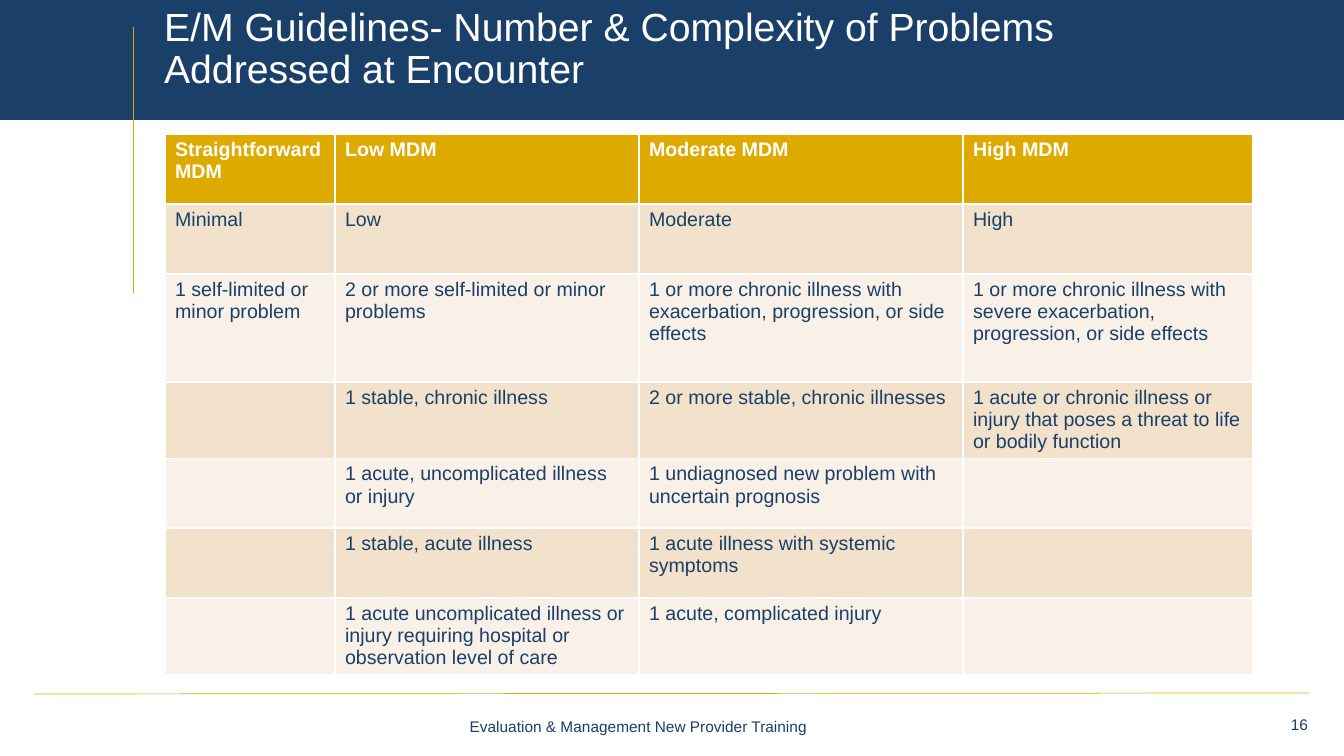
import pptx
import pptx.dml.color
import pptx.enum.shapes
import pptx.enum.text
import pptx.oxml.ns
import pptx.util
from lxml import etree

TITLE = "E/M Guidelines- Number & Complexity of Problems Addressed at Encounter"
FOOTER = "Evaluation & Management New Provider Training"
PAGE_NUMBER = "16"
ROWS = [
    ["Straightforward MDM", "Low MDM", "Moderate MDM", "High MDM"],
    ["Minimal", "Low", "Moderate", "High"],
    ["1 self-limited or minor problem",
     "2 or more self-limited or minor problems",
     "1 or more chronic illness with exacerbation, progression, or side effects",
     "1 or more chronic illness with severe exacerbation, progression, or side effects"],
    ["", "1 stable, chronic illness", "2 or more stable, chronic illnesses",
     "1 acute or chronic illness or injury that poses a threat to life or bodily function"],
    ["", "1 acute, uncomplicated illness or injury",
     "1 undiagnosed new problem with uncertain prognosis", ""],
    ["", "1 stable, acute illness", "1 acute illness with systemic symptoms", ""],
    ["", "1 acute uncomplicated illness or injury requiring hospital or observation level of care",
     "1 acute, complicated injury", ""],
]
COLUMN_WIDTHS = [170, 304, 324, 290]
ROW_HEIGHTS = [70, 70, 108, 76, 70, 70, 76]
COLORS = {"navy": "1A3F68", "gold": "DEAA00", "white": "FFFFFF",
          "sand": "F2E2CC", "cream": "F9F1E7"}
FONT = "Arial"
SLIDE_WIDTH, SLIDE_HEIGHT = 1344, 756
EMU_PER_PX = 914400 / 100.8
ALIGN = pptx.enum.text.PP_ALIGN
BOTTOM = pptx.enum.text.MSO_ANCHOR.BOTTOM


def px(length):
    return pptx.util.Emu(round(length * EMU_PER_PX))


def color(name):
    return pptx.dml.color.RGBColor.from_string(COLORS[name])


def style_font(para, size, color_name, bold=False):
    para.font.name = FONT
    para.font.size = pptx.util.Pt(size)
    para.font.bold = bold
    para.font.color.rgb = color(color_name)


def fill_bottom_text(box, text, size, color_name, align):
    """Set one tightly spaced paragraph that sits at the bottom of the box."""
    frame = box.text_frame
    frame.text = text
    frame.word_wrap = True
    frame.auto_size = pptx.enum.text.MSO_AUTO_SIZE.NONE
    frame.vertical_anchor = BOTTOM
    para = frame.paragraphs[0]
    para.alignment = align
    para.line_spacing = 0.9
    style_font(para, size, color_name)


def add_rule(page, start, end):
    rule = page.shapes.add_connector(
        pptx.enum.shapes.MSO_CONNECTOR.STRAIGHT, *map(px, start + end))
    rule.line.color.rgb = color("gold")
    rule.line.width = pptx.util.Pt(0.5)
    etree.SubElement(rule._element.spPr, pptx.oxml.ns.qn("a:effectLst"))


def add_footer(page):
    number = page.shapes.add_textbox(*map(px, (966, 704, 352, 35)))
    fill_bottom_text(number, PAGE_NUMBER, 11, "navy", ALIGN.RIGHT)
    footer = page.shapes.add_textbox(*map(px, (371, 708, 601, 33)))
    fill_bottom_text(footer, FOOTER, 11, "navy", ALIGN.CENTER)
    footer.text_frame.margin_right = px(76)
    add_rule(page, (1309, 693), (34, 694))


def add_header(page):
    band = page.shapes.add_shape(
        pptx.enum.shapes.MSO_SHAPE.RECTANGLE, 0, 0, px(SLIDE_WIDTH), px(120))
    band.shadow.inherit = False
    band.fill.solid()
    band.fill.fore_color.rgb = color("navy")
    band.line.fill.background()
    add_rule(page, (133, 293), (133, 27))

    title = page.shapes.title
    title.left, title.top, title.width, title.height = map(px, (154, 47, 1008, 50))
    fill_bottom_text(title, TITLE, 28, "white", ALIGN.LEFT)
    page.shapes._spTree.append(title._element)  # in front of the band


def add_problem_table(page):
    table = page.shapes.add_table(
        len(ROWS), len(COLUMN_WIDTHS), px(165), px(134),
        px(sum(COLUMN_WIDTHS)), px(sum(ROW_HEIGHTS))).table
    for column, width in zip(table.columns, COLUMN_WIDTHS):
        column.width = px(width)
    for row_index, (row, height) in enumerate(zip(table.rows, ROW_HEIGHTS)):
        row.height = px(height)
        is_header = row_index == 0
        fill = "gold" if is_header else ("cream", "sand")[row_index % 2]
        for cell, text in zip(row.cells, ROWS[row_index]):
            cell.text = text
            cell.fill.solid()
            cell.fill.fore_color.rgb = color(fill)
            style_font(cell.text_frame.paragraphs[0], 14,
                       "white" if is_header else "navy", is_header)


def main():
    deck = pptx.Presentation()
    deck.slide_width, deck.slide_height = px(SLIDE_WIDTH), px(SLIDE_HEIGHT)
    page = deck.slides.add_slide(deck.slide_layouts[5])
    add_footer(page)
    add_header(page)
    add_problem_table(page)
    deck.save("out.pptx")


if __name__ == "__main__":
    main()
